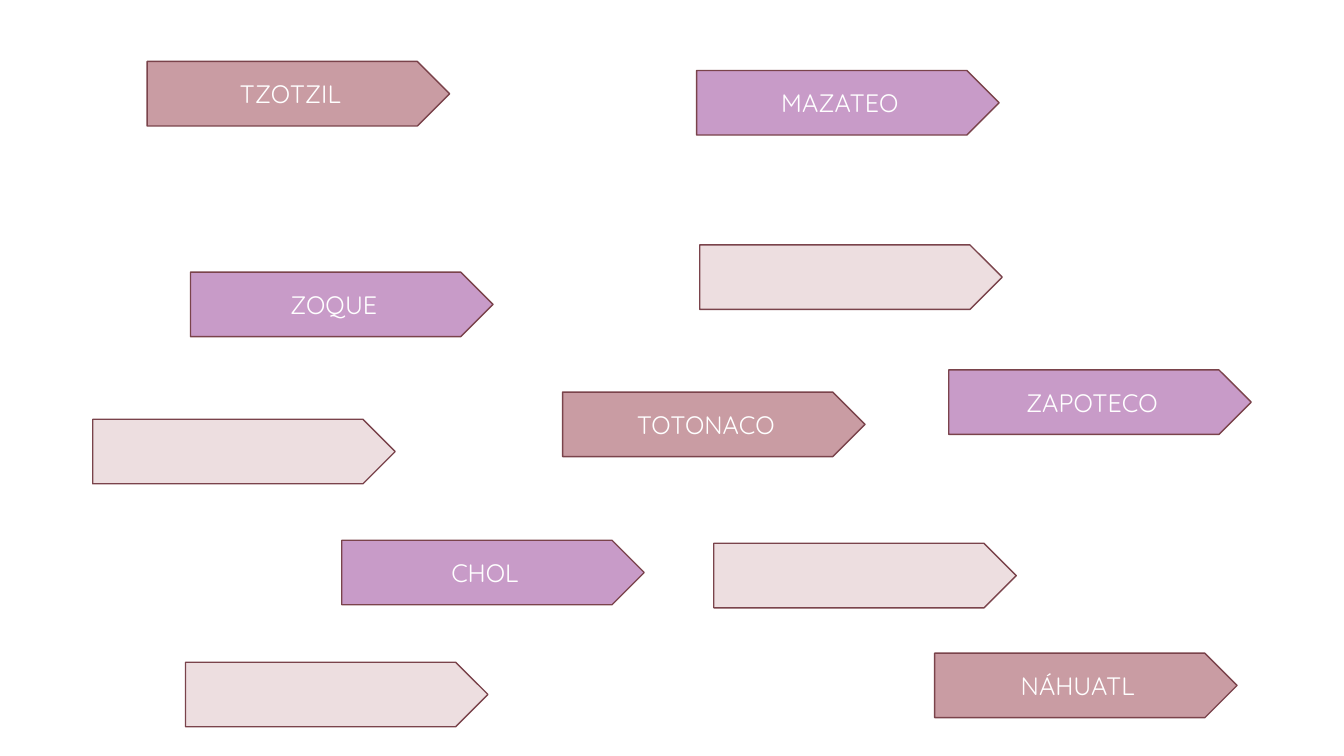
from dataclasses import dataclass

from pptx import Presentation
from pptx.dml.color import RGBColor
from pptx.enum.shapes import MSO_SHAPE as Preset
from pptx.enum.text import MSO_ANCHOR as Anchor, PP_ALIGN as Align
from pptx.slide import Slide
from pptx.util import Emu, Pt

EMU_PER_PX = 9144  # 100 px to the inch


@dataclass(frozen=True)
class Theme:
    background: str = "FFFFFF"
    lilac: str = "C89BC8"
    rose: str = "C99CA3"
    blush: str = "EDDEE0"
    outline: str = "7A434B"
    text: str = "FFFFFF"
    font: str = "Quicksand"
    text_size: int = 18
    outline_width: int = 1


@dataclass(frozen=True)
class LanguageTag:
    left: int
    top: int
    fill: str
    name: str = ""


THEME = Theme()
SLIDE_WIDTH, SLIDE_HEIGHT = 1333, 750
TAG_WIDTH, TAG_HEIGHT = 300, 64

# Tags from back to front; the blush ones carry no label
TAGS = [
    LanguageTag(189, 270, THEME.lilac, "ZOQUE"),
    LanguageTag(558, 389, THEME.rose, "TOTONACO"),
    LanguageTag(694, 243, THEME.blush),
    LanguageTag(339, 536, THEME.lilac, "CHOL"),
    LanguageTag(708, 539, THEME.blush),
    LanguageTag(146, 61, THEME.rose, "TZOTZIL"),
    LanguageTag(92, 416, THEME.blush),
    LanguageTag(941, 367, THEME.lilac, "ZAPOTECO"),
    LanguageTag(691, 70, THEME.lilac, "MAZATEO"),
    LanguageTag(927, 648, THEME.rose, "NÁHUATL"),
    LanguageTag(184, 657, THEME.blush),
]


def px(length: int) -> Emu:
    return Emu(length * EMU_PER_PX)


def color(code: str) -> RGBColor:
    return RGBColor.from_string(code)


def draw_tag(page: Slide, tag: LanguageTag) -> None:
    box = page.shapes.add_shape(
        Preset.PENTAGON, px(tag.left), px(tag.top), px(TAG_WIDTH), px(TAG_HEIGHT)
    )
    box.shadow.inherit = False
    box.fill.solid()
    box.fill.fore_color.rgb = color(tag.fill)
    box.line.color.rgb = color(THEME.outline)
    box.line.width = Pt(THEME.outline_width)
    if not tag.name:
        return

    # Label
    frame = box.text_frame
    frame.word_wrap = True
    frame.vertical_anchor = Anchor.MIDDLE
    para = frame.paragraphs[0]
    para.text = tag.name
    para.alignment = Align.CENTER
    para.font.name = THEME.font
    para.font.size = Pt(THEME.text_size)
    para.font.color.rgb = color(THEME.text)


def main() -> None:
    # Slide with a plain background
    deck = Presentation()
    deck.slide_width, deck.slide_height = px(SLIDE_WIDTH), px(SLIDE_HEIGHT)
    page = deck.slides.add_slide(deck.slide_layouts[6])
    page.background.fill.solid()
    page.background.fill.fore_color.rgb = color(THEME.background)

    # Language tags
    for tag in TAGS:
        draw_tag(page, tag)

    deck.save("out.pptx")


if __name__ == "__main__":
    main()
